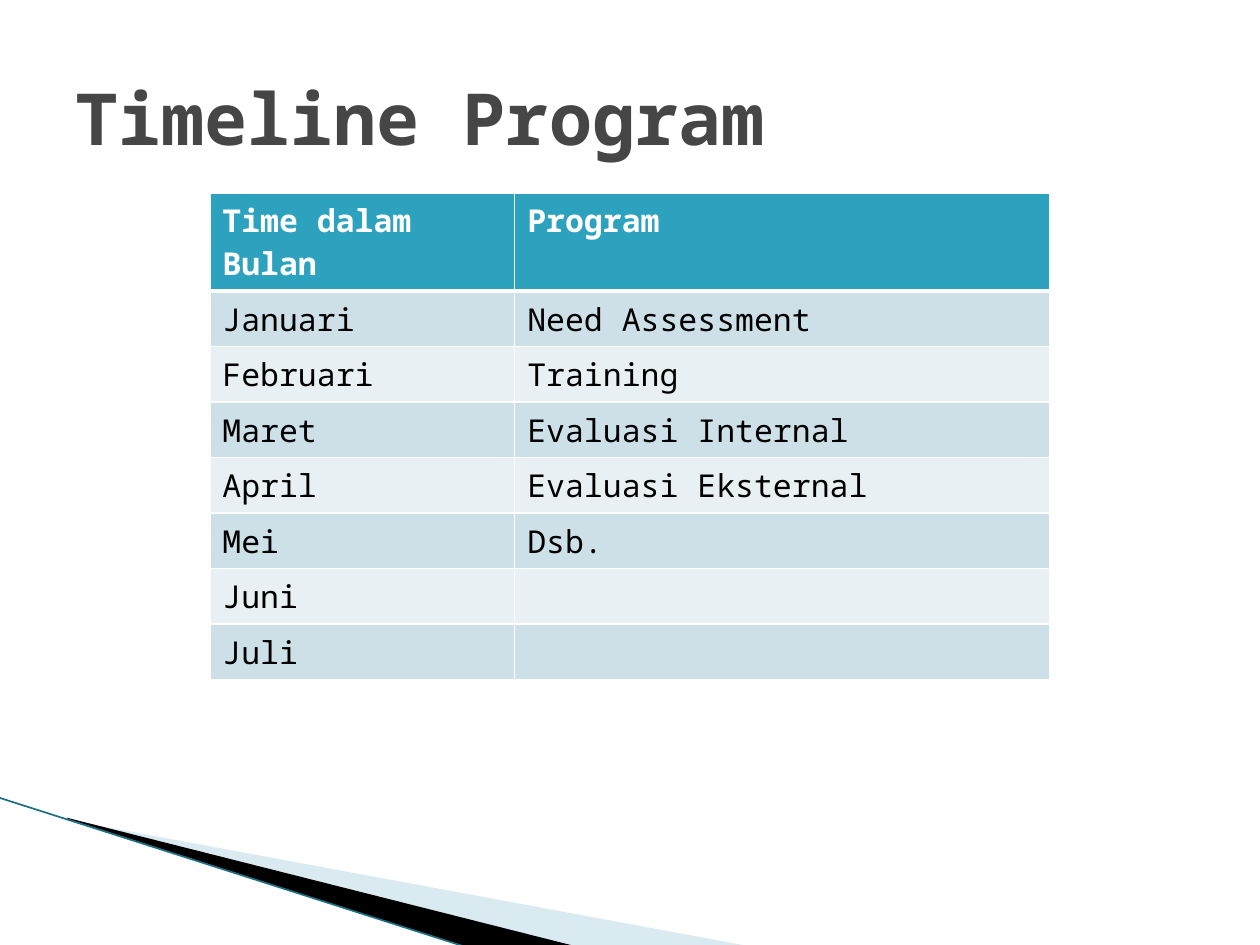
from lxml import etree
from pptx import Presentation
from pptx.dml.color import RGBColor
from pptx.enum import shapes, text
from pptx.oxml import ns
from pptx.util import Inches, Pt

FONT = "Noto Sans Mono"
WHITE = RGBColor(0xFF, 0xFF, 0xFF)
BLACK = RGBColor(0x00, 0x00, 0x00)
TITLE_GRAY = RGBColor(0x46, 0x46, 0x46)
HEADER_TEAL = RGBColor(0x2D, 0xA2, 0xBF)
BAND_DARK = RGBColor(0xCD, 0xE0, 0xE8)
BAND_LIGHT = RGBColor(0xE8, 0xF0, 0xF4)
WEDGE_BLUE = RGBColor(0xA0, 0xCB, 0xDC)
EDGE_TEAL = RGBColor(0x1B, 0x6F, 0x83)

SLIDE_WIDTH = 10
PALE_WEDGE = [(0.55, 6.51), (5.95, 7.51), (4.56, 7.51), (0.55, 6.5)]
PALE_FRAME = (0.78, 5.47, 4.16, 1.58)
BLACK_WEDGE = [(0.53, 6.49), (4.57, 7.51), (3.72, 7.52), (0.54, 6.5)]
BLACK_FRAME = (-0.06, 6.33, 4.16, 0.92)
COLUMN_WIDTHS = [2.42, 4.25]
ROW_HEIGHT = 0.41
ROWS = [
    ("Time dalam Bulan", "Program"),
    ("Januari", "Need Assessment"),
    ("Februari", "Training"),
    ("Maret", "Evaluasi Internal"),
    ("April", "Evaluasi Eksternal"),
    ("Mei", "Dsb."),
    ("Juni", ""),
    ("Juli", ""),
]


def style_paragraph(paragraph, size, color, bold):
    font = paragraph.font
    font.name = FONT
    font.size = Pt(size)
    font.bold = bold
    font.color.rgb = color


def set_frame(shape, frame):
    left, top, width, height = map(Inches, frame)
    shift_x, shift_y = shape.left - left, shape.top - top
    outline = shape._element.find(".//" + ns.qn("a:path"))
    for point in outline.iter(ns.qn("a:pt")):
        point.set("x", str(int(point.get("x")) + shift_x))
        point.set("y", str(int(point.get("y")) + shift_y))
    outline.set("w", str(width))
    outline.set("h", str(height))
    shape.left, shape.top = left, top
    shape.width, shape.height = width, height


def add_wedge(slide, points, frame, color, opacity=100):
    corners = [(Inches(x), Inches(y)) for x, y in points]
    builder = slide.shapes.build_freeform(*corners[0])
    builder.add_line_segments(corners[1:], close=True)
    shape = builder.convert_to_shape()
    set_frame(shape, frame)
    shape.shadow.inherit = False
    shape.fill.solid()
    shape.fill.fore_color.rgb = color
    shape.line.fill.background()
    if opacity < 100:
        color_element = shape.fill._xPr.find(".//" + ns.qn("a:srgbClr"))
        alpha = etree.SubElement(color_element, ns.qn("a:alpha"))
        alpha.set("val", str(opacity * 1000))


def add_edge(slide):
    connector = slide.shapes.add_connector(
        shapes.MSO_CONNECTOR.STRAIGHT,
        Inches(-0.01), Inches(6.33), Inches(3.71), Inches(7.52))
    connector.line.color.rgb = EDGE_TEAL
    connector.line.width = Pt(0.95)
    etree.SubElement(connector._element.spPr, ns.qn("a:effectLst"))


def set_title(slide, wording):
    title = slide.shapes.title
    title.left, title.top = Inches(0.5), Inches(0.3)
    title.width, title.height = Inches(9), Inches(1.25)
    frame = title.text_frame
    frame.text = wording
    frame.auto_size = text.MSO_AUTO_SIZE.NONE
    frame.vertical_anchor = text.MSO_ANCHOR.MIDDLE
    paragraph = frame.paragraphs[0]
    paragraph.alignment = text.PP_ALIGN.LEFT
    style_paragraph(paragraph, 41, TITLE_GRAY, True)


def set_borders(cell, widths):
    properties = cell._tc.get_or_add_tcPr()
    for index, (side, width) in enumerate(widths.items()):
        border = etree.Element(ns.qn(f"a:ln{side}"), w=str(Pt(width)))
        fill = etree.SubElement(border, ns.qn("a:solidFill"))
        etree.SubElement(fill, ns.qn("a:srgbClr"), val=str(WHITE))
        properties.insert(index, border)


def add_timeline(slide):
    width = sum(COLUMN_WIDTHS)
    table = slide.shapes.add_table(
        len(ROWS), len(COLUMN_WIDTHS),
        Inches((SLIDE_WIDTH - width) / 2), Inches(1.53),
        Inches(width), Inches(ROW_HEIGHT * len(ROWS))).table
    for column, column_width in zip(table.columns, COLUMN_WIDTHS):
        column.width = Inches(column_width)
    for row_index, entries in enumerate(ROWS):
        header = row_index == 0
        band = BAND_DARK if row_index % 2 else BAND_LIGHT
        borders = {"L": 1, "R": 1, "T": 3 if row_index == 1 else 1,
                   "B": 3 if header else 1}
        for cell, entry in zip(table.rows[row_index].cells, entries):
            cell.text = entry
            cell.fill.solid()
            cell.fill.fore_color.rgb = HEADER_TEAL if header else band
            style_paragraph(cell.text_frame.paragraphs[0], 18,
                            WHITE if header else BLACK, header)
            set_borders(cell, borders)


def main():
    presentation = Presentation()
    presentation.slide_width = Inches(SLIDE_WIDTH)
    presentation.slide_height = Inches(7.5)
    slide = presentation.slides.add_slide(presentation.slide_layouts[5])
    add_wedge(slide, PALE_WEDGE, PALE_FRAME, WEDGE_BLUE, opacity=40)
    add_wedge(slide, BLACK_WEDGE, BLACK_FRAME, BLACK)
    add_edge(slide)
    set_title(slide, "Timeline Program")
    add_timeline(slide)
    presentation.save("out.pptx")


if __name__ == "__main__":
    main()
